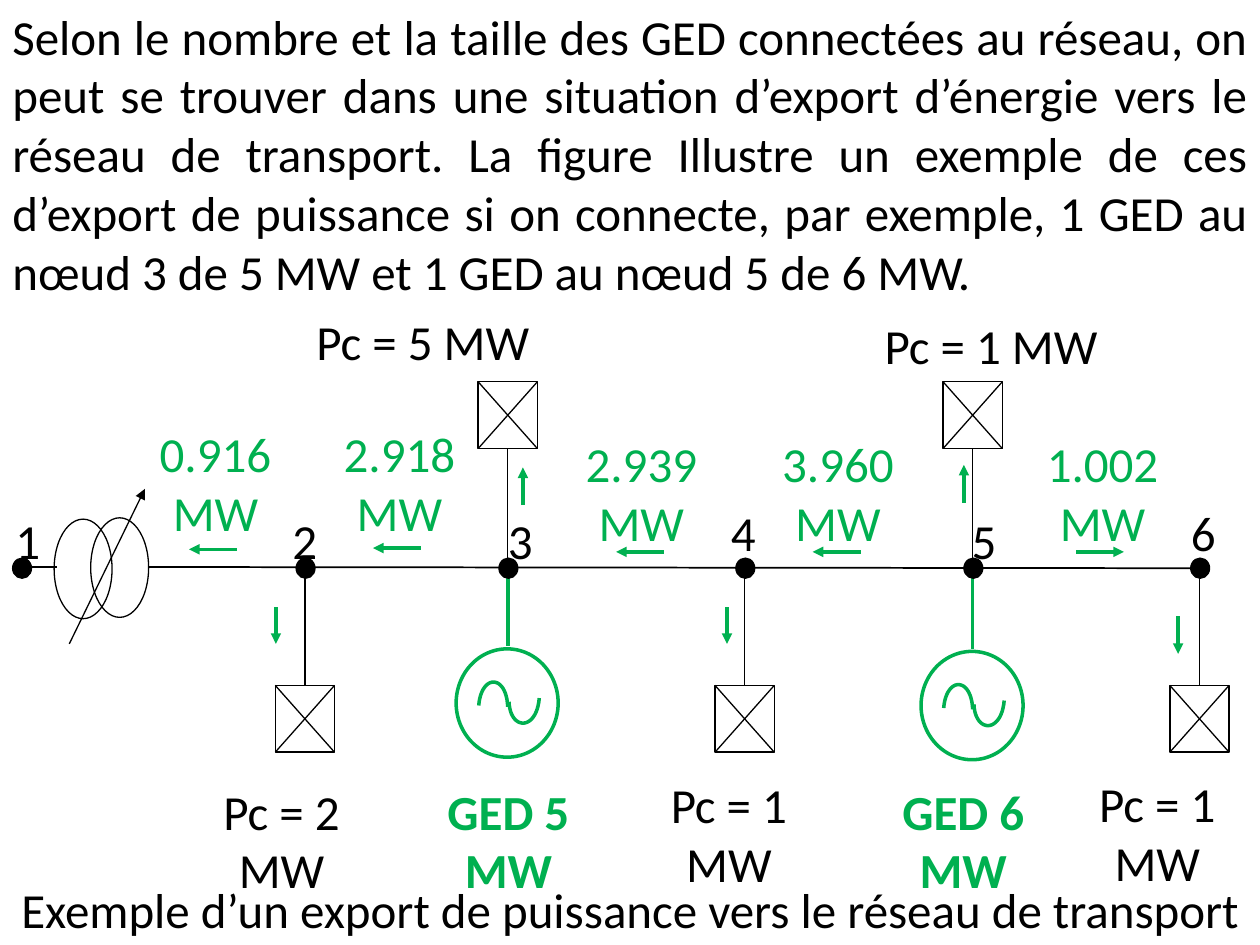
from typing import NamedTuple

from lxml.etree import SubElement
from pptx import Presentation
from pptx.dml.color import RGBColor
from pptx.enum.shapes import MSO_CONNECTOR, MSO_SHAPE as SHAPE
from pptx.enum.text import MSO_ANCHOR as ANCHOR, PP_ALIGN as ALIGN
from pptx.oxml.ns import qn
from pptx.util import Inches, Pt

BLACK, GREEN, WHITE = "000000", "00B050", "FFFFFF"
THIN, BUS, THICK = 0.75, 1, 2
BUS_Y = 4.51
LOAD_W, LOAD_H = 0.47, 0.53


class Node(NamedTuple):
    name: str
    x: float
    label_x: float
    label_y: float


class Load(NamedTuple):
    x: float
    top: float


class Generator(NamedTuple):
    x: float
    y: float


class Label(NamedTuple):
    text: str
    x: float
    y: float
    w: float
    h: float
    color: str = BLACK
    bold: bool = False


class Arrow(NamedTuple):
    x1: float
    y1: float
    x2: float
    y2: float


NODES = [
    Node("1", 0.17, 0.1, 4.05), Node("2", 2.42, 2.3, 4.05),
    Node("3", 4.03, 4.01, 4.05), Node("4", 5.91, 5.78, 3.99),
    Node("5", 7.72, 7.69, 4.05), Node("6", 9.52, 9.43, 3.99),
]
LOADS = [Load(2.42, 5.44), Load(4.03, 3.03), Load(5.91, 5.44),
         Load(7.72, 3.03), Load(9.52, 5.44)]
GENERATORS = [Generator(4.03, 5.58), Generator(7.72, 5.6)]
LABELS = [
    # Loads
    Label("Pc = 2 MW", 1.73, 6.2, 1.01, 0.37),
    Label("Pc = 5 MW", 2.27, 2.47, 2.17, 0.42),
    Label("Pc = 1 MW", 5.28, 6.15, 1.01, 0.37),
    Label("Pc = 1 MW", 6.96, 2.5, 1.81, 0.29),
    Label("Pc = 1 MW", 8.68, 6.14, 1.01, 0.37),
    # Generators
    Label("GED 5 MW", 3.42, 6.2, 1.23, 0.37, GREEN, True),
    Label("GED 6 MW", 7.03, 6.2, 1.23, 0.37, GREEN, True),
    # Power flows
    Label("0.916 MW", 1.15, 3.36, 1.12, 0.87, GREEN),
    Label("2.918 MW", 2.61, 3.36, 1.12, 0.87, GREEN),
    Label("2.939 MW", 4.53, 3.44, 1.12, 0.93, GREEN),
    Label("3.960 MW", 6.09, 3.44, 1.12, 0.93, GREEN),
    Label("1.002 MW", 8.19, 3.44, 1.12, 0.78, GREEN),
]
FLOWS = [
    Arrow(1.88, 4.36, 1.5, 4.36), Arrow(3.34, 4.35, 2.96, 4.35),
    Arrow(5.27, 4.38, 4.89, 4.38), Arrow(6.83, 4.38, 6.45, 4.38),
    Arrow(8.54, 4.38, 8.92, 4.38),
    Arrow(2.19, 4.82, 2.19, 5.11), Arrow(5.77, 4.82, 5.77, 5.11),
    Arrow(9.35, 4.89, 9.35, 5.19),
    Arrow(4.15, 4.01, 4.15, 3.71), Arrow(7.65, 3.99, 7.65, 3.69),
]
# Bezier control points of the two half waves, from the generator centre
WAVES = [
    [(-0.23, 0.02), (-0.21, -0.23), (-0.01, -0.23), (0, 0.03)],
    [(0.01, -0.01), (0.02, 0.22), (0.23, 0.22), (0.25, -0.04)],
]
INTRO = ("Selon le nombre et la taille des GED connectées au réseau, on peut se "
         "trouver dans une situation d’export d’énergie vers le réseau de transport. "
         "La figure Illustre un exemple de ces d’export de puissance si on connecte, "
         "par exemple, 1 GED au nœud 3 de 5 MW et 1 GED au nœud 5 de 6 MW.")
CAPTION = "Exemple d’un export de puissance vers le réseau de transport"


def rgb(color: str) -> RGBColor:
    return RGBColor.from_string(color)


def style(sp, fill: str | None, line: str, width: float) -> None:
    sp.shadow.inherit = False
    if fill:
        sp.fill.solid()
        sp.fill.fore_color.rgb = rgb(fill)
    else:
        sp.fill.background()
    sp.line.color.rgb = rgb(line)
    sp.line.width = Pt(width)


def add_shape(s, kind, x: float, y: float, w: float, h: float,
              fill: str | None = None, line: str = BLACK, width: float = THIN) -> None:
    sp = s.shapes.add_shape(kind, Inches(x), Inches(y), Inches(w), Inches(h))
    style(sp, fill, line, width)


def add_line(s, x1: float, y1: float, x2: float, y2: float, color: str = BLACK,
             width: float = THIN, arrow: bool = False) -> None:
    cx = s.shapes.add_connector(MSO_CONNECTOR.STRAIGHT, Inches(x1), Inches(y1),
                                Inches(x2), Inches(y2))
    cx.line.color.rgb = rgb(color)
    cx.line.width = Pt(width)
    if arrow:
        SubElement(cx.line._get_or_add_ln(), qn("a:tailEnd"), type="triangle")
    SubElement(cx._element.spPr, qn("a:effectLst"))


def add_text(s, label: Label, align=ALIGN.CENTER, anchor=ANCHOR.TOP,
             inset: tuple[float, float] = (0, 0)) -> None:
    box = s.shapes.add_textbox(Inches(label.x), Inches(label.y),
                               Inches(label.w), Inches(label.h))
    tf = box.text_frame
    tf.word_wrap = True
    tf.vertical_anchor = anchor
    tf.margin_left = tf.margin_right = Inches(inset[0])
    tf.margin_top = tf.margin_bottom = Inches(inset[1])
    p = tf.paragraphs[0]
    p.alignment = align
    r = p.add_run()
    r.text = label.text
    r.font.name, r.font.size, r.font.bold = "Calibri", Pt(28), label.bold
    r.font.color.rgb = rgb(label.color)


def add_load(s, load: Load) -> None:
    left, right = load.x - LOAD_W / 2, load.x + LOAD_W / 2
    top, bottom = load.top, load.top + LOAD_H
    add_shape(s, SHAPE.RECTANGLE, left, top, LOAD_W, LOAD_H, WHITE)
    add_line(s, left, top, right, bottom)
    add_line(s, left, bottom, right, top)
    add_line(s, load.x, BUS_Y, load.x, top if top > BUS_Y else bottom)


def bezier(points: list, steps: int = 24) -> list:
    def at(t: float, axis: int) -> float:
        a, b, c, d = (pt[axis] for pt in points)
        u = 1 - t
        return a * u**3 + 3 * b * u * u * t + 3 * c * u * t * t + d * t**3
    return [(at(i / steps, 0), at(i / steps, 1)) for i in range(steps + 1)]


def add_generator(s, g: Generator) -> None:
    add_shape(s, SHAPE.OVAL, g.x - 0.41, g.y - 0.43, 0.81, 0.86, WHITE, GREEN, THICK)
    add_line(s, g.x, BUS_Y, g.x, g.y - 0.45, GREEN, THICK)
    for wave in WAVES:
        pts = [(Inches(g.x + dx), Inches(g.y + dy)) for dx, dy in bezier(wave)]
        fb = s.shapes.build_freeform(*pts[0])
        fb.add_line_segments(pts[1:], close=False)
        style(fb.convert_to_shape(), None, GREEN, THICK)


def main() -> None:
    prs = Presentation()
    prs.slide_width, prs.slide_height = Inches(10), Inches(7.5)
    s = prs.slides.add_slide(prs.slide_layouts[6])

    # Introduction
    add_text(s, Label(INTRO, 0, 0, 10, 2.93), ALIGN.JUSTIFY, inset=(0.1, 0.05))

    # Generators and loads
    for g in GENERATORS:
        add_generator(s, g)
    for load in LOADS:
        add_load(s, load)

    # Transformer
    add_shape(s, SHAPE.OVAL, 0.72, 4.11, 0.46, 0.79)
    add_shape(s, SHAPE.OVAL, 0.43, 4.12, 0.46, 0.79)
    add_line(s, 0.55, 5.11, 1.15, 3.88, arrow=True)

    # Bus and nodes
    add_line(s, 0.18, 4.5, 0.45, 4.5, width=BUS)
    add_line(s, 1.18, 4.5, 9.6, 4.51, width=BUS)
    for n in NODES:
        add_shape(s, SHAPE.OVAL, n.x - 0.07, BUS_Y - 0.08, 0.15, 0.16, BLACK)
        add_text(s, Label(n.name, n.label_x, n.label_y, 0.24, 0.37))

    # Power values and flow directions
    for label in LABELS:
        add_text(s, label)
    for flow in FLOWS:
        add_line(s, *flow, GREEN, THICK, arrow=True)

    # Caption
    add_text(s, Label(CAPTION, 0, 6.93, 10, 0.57), anchor=ANCHOR.MIDDLE,
             inset=(0.1, 0.05))

    prs.save("out.pptx")


if __name__ == "__main__":
    main()
